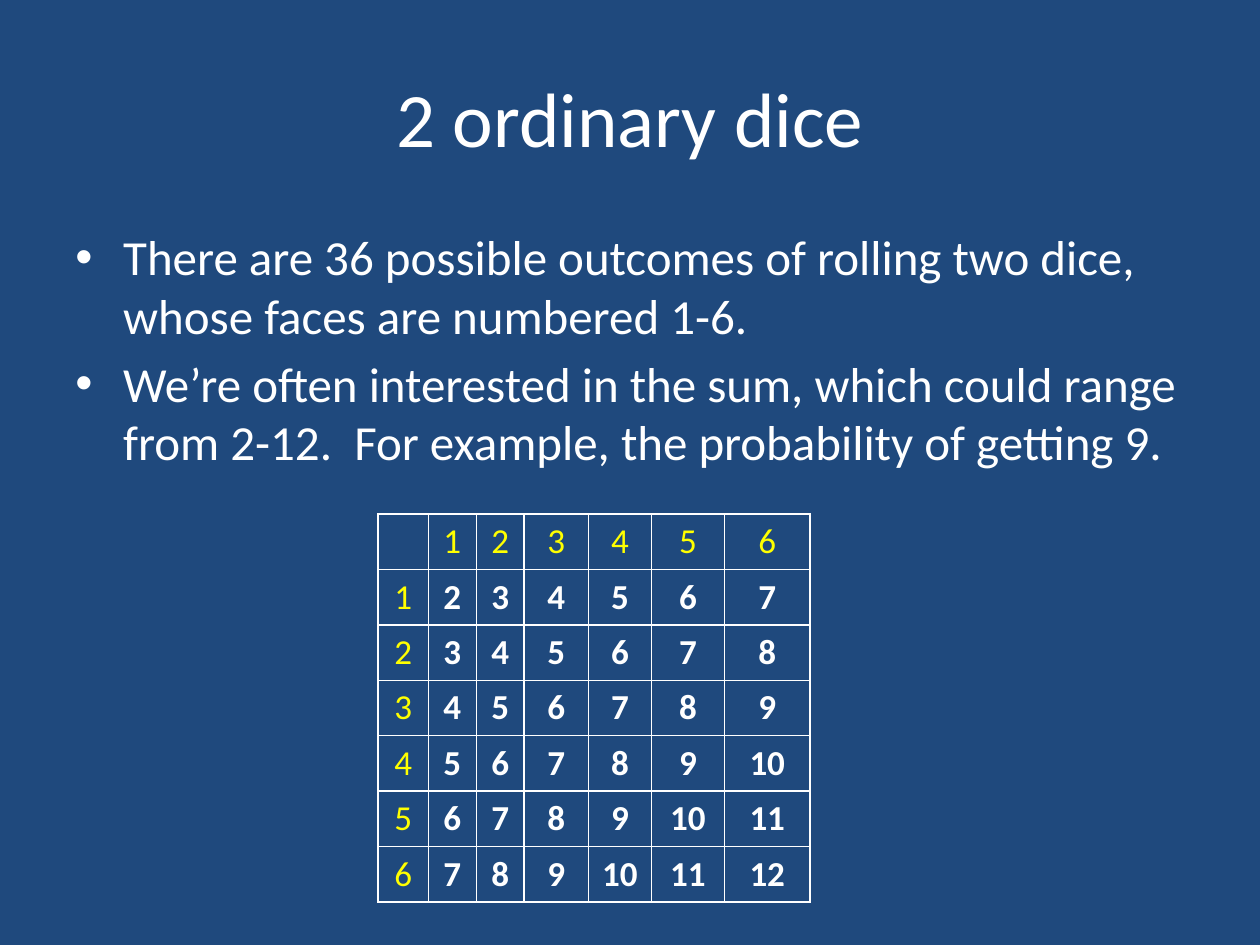
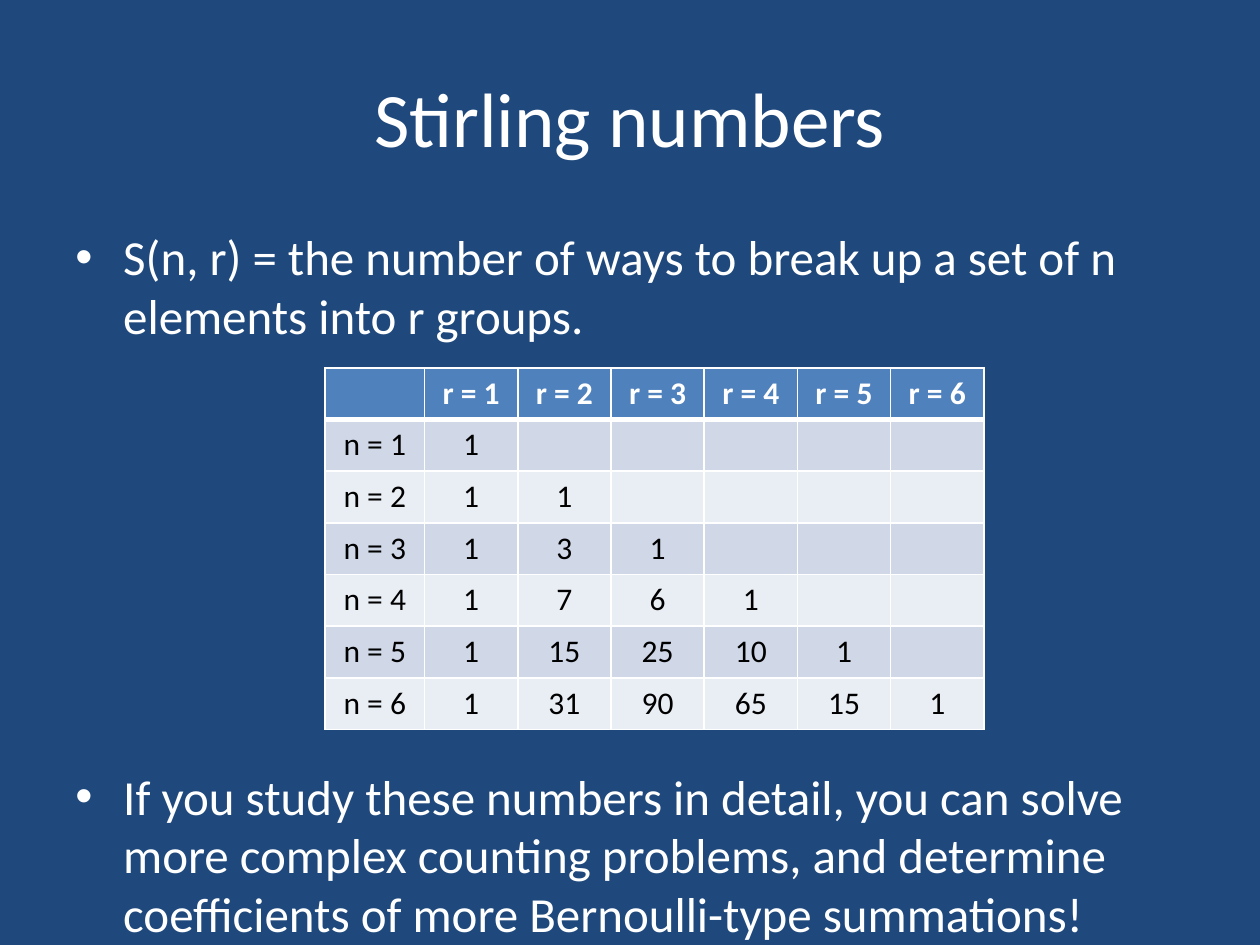
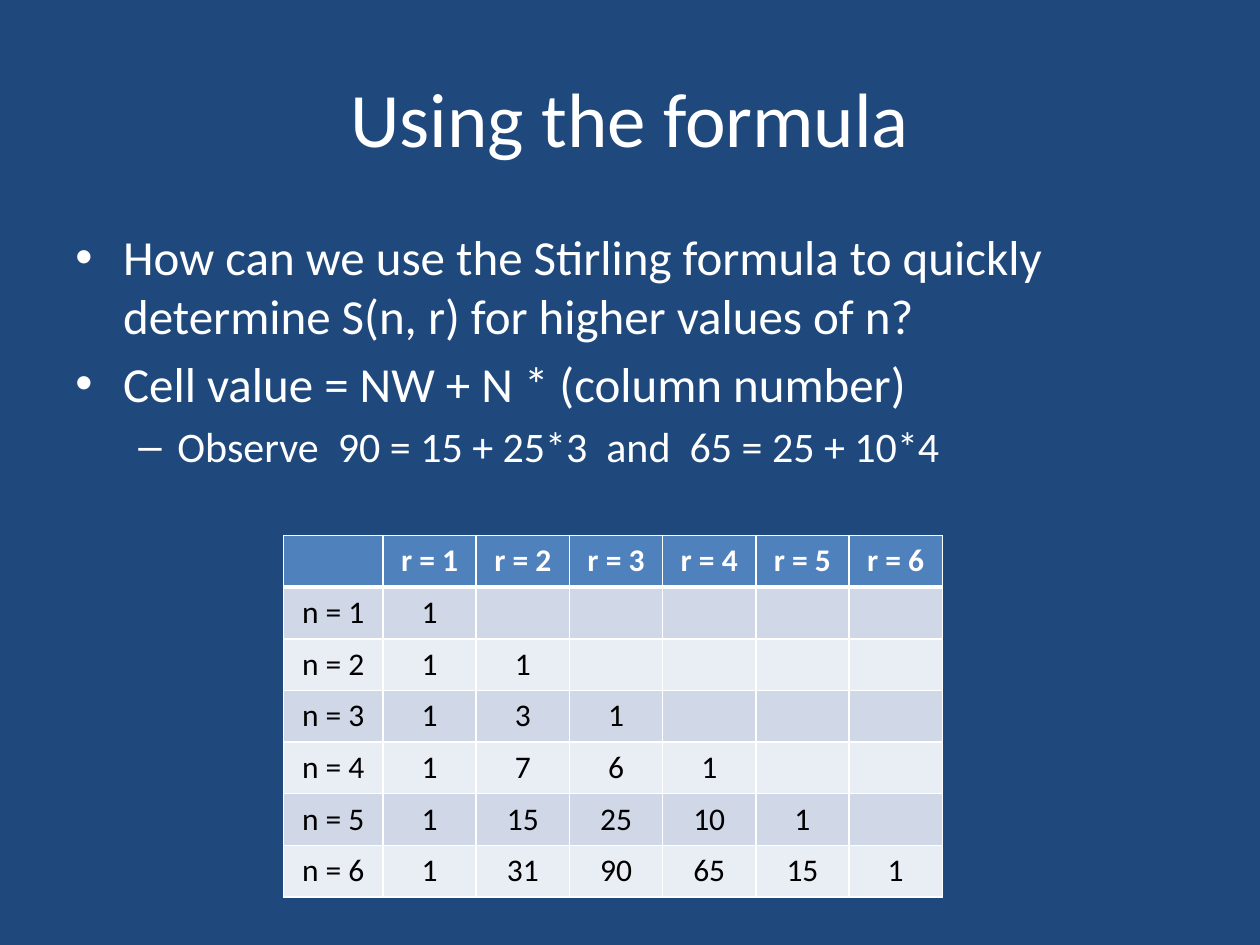
"""Build three slides on dice sums and Stirling numbers."""
from lxml import etree
from pptx import Presentation
from pptx.dml.color import RGBColor
from pptx.enum.text import MSO_ANCHOR, PP_ALIGN
from pptx.oxml.ns import qn
from pptx.util import Inches, Pt

NAVY, WHITE, BLACK, YELLOW = "1F497D", "FFFFFF", "000000", "FFFF00"
HEADER_BLUE, BAND_DARK, BAND_LIGHT = "4F81BD", "D0D8E8", "E9EDF4"
LEVELS = [("•", 28, 0.38, 0.38), ("–", 24, 0.81, 0.31)]
BORDER_SIDES = ("lnL", "lnR", "lnT", "lnB")


def style(paragraph, size, colour, bold=False):
    """Format every run of a paragraph."""
    for run in paragraph.runs:
        run.font.name = "Calibri"
        run.font.size = Pt(size)
        run.font.bold = bold
        run.font.color.rgb = RGBColor.from_string(colour)


def add_grid(slide, left, top, widths, row_height, rows, size, look):
    """Add a white-ruled table; look(row, column) gives fill, colour and bold."""
    table = slide.shapes.add_table(
        len(rows), len(widths), Inches(left), Inches(top),
        Inches(sum(widths)), Inches(row_height * len(rows))).table
    table.first_row = table.horz_banding = False
    for column, width in zip(table.columns, widths):
        column.width = Inches(width)
    for r, row in enumerate(rows):
        table.rows[r].height = Inches(row_height)
        for c, value in enumerate(row):
            cell = table.cell(r, c)
            fill, colour, bold = look(r, c)
            for side in BORDER_SIDES:
                under_header = fill and (r, side) in ((0, "lnB"), (1, "lnT"))
                line = etree.SubElement(cell._tc.get_or_add_tcPr(), qn(f"a:{side}"),
                                        w=str(Pt(3 if under_header else 1)))
                solid = etree.SubElement(line, qn("a:solidFill"))
                etree.SubElement(solid, qn("a:srgbClr"), val=WHITE)
            if fill:
                cell.fill.solid()
                cell.fill.fore_color.rgb = RGBColor.from_string(fill)
            else:
                cell.fill.background()
            paragraph = cell.text_frame.paragraphs[0]
            paragraph.text = str(value)
            paragraph.alignment = PP_ALIGN.CENTER
            style(paragraph, size, colour, bold)


faces = range(1, 7)
dice_sums = [["", *faces]] + [[a, *(a + b for b in faces)] for a in faces]

stirling_rows = [["", *(f"r = {r}" for r in faces)]]
counts = [1, 0, 0, 0, 0, 0, 0]
for n in faces:
    counts = [0] + [counts[r - 1] + counts[r] * r for r in faces]
    stirling_rows.append([f"n = {n}", *(count or "" for count in counts[1:])])


def_dice = dict(
    left=3, top=4.08, widths=[0.4, 0.38, 0.38, 0.51, 0.5, 0.58, 0.68],
    row_height=0.44, rows=dice_sums, size=20,
    look=lambda r, c: (None, WHITE, True) if r and c else (None, YELLOW, False))
stirling = dict(
    widths=[0.79] + [0.74] * 6, row_height=0.41, rows=stirling_rows, size=18,
    look=lambda r, c: (BAND_DARK if r % 2 else BAND_LIGHT, BLACK, False)
    if r else (HEADER_BLUE, WHITE, True))

pages = [
    ("2 ordinary dice", 4.95, [
        (0, 0, "There are 36 possible outcomes of rolling two dice, whose faces are numbered 1-6."),
        (0, 5, "We’re often interested in the sum, which could range from 2-12.  "
               "For example, the probability of getting 9."),
    ], def_dice),
    ("Stirling numbers", 5.75, [
        (0, 0, "S(n, r) = the number of ways to break up a set of n elements into r groups."),
        (0, 241, "If you study these numbers in detail, you can solve more complex counting "
                 "problems, and determine coefficients of more Bernoulli-type summations!"),
    ], dict(stirling, left=2.58, top=2.92)),
    ("Using the formula", 4.95, [
        (0, 0, "How can we use the Stirling formula to quickly determine S(n, r) "
               "for higher values of n?"),
        (0, 5, "Cell value = NW + N * (column number)"),
        (1, 5, "Observe  90 = 15 + 25*3  and  65 = 25 + 10*4"),
    ], dict(stirling, left=2.25, top=4.25)),
]

prs = Presentation()
prs.slide_width, prs.slide_height = Inches(10), Inches(7.5)
backdrop = prs.slide_master.background.fill
backdrop.solid()
backdrop.fore_color.rgb = RGBColor.from_string(NAVY)

for heading, body_height, points, grid in pages:
    slide = prs.slides.add_slide(prs.slide_layouts[5])
    title = slide.shapes.title
    title.left, title.top = Inches(0.5), Inches(0.3)
    title.width, title.height = Inches(9), Inches(1.25)
    title.text_frame.text = heading
    title.text_frame.vertical_anchor = MSO_ANCHOR.MIDDLE
    title.text_frame.paragraphs[0].alignment = PP_ALIGN.CENTER
    style(title.text_frame.paragraphs[0], 44, WHITE)

    body = slide.shapes.add_textbox(
        Inches(0.5), Inches(1.75), Inches(9), Inches(body_height)).text_frame
    body.word_wrap = True
    body.text = "\n".join(text for _, _, text in points)
    for paragraph, (level, gap, _) in zip(body.paragraphs, points):
        bullet, size, margin, hanging = LEVELS[level]
        paragraph.level = level
        paragraph.space_before = Pt(gap)
        style(paragraph, size, WHITE)
        properties = paragraph._p.get_or_add_pPr()
        properties.set("marL", str(Inches(margin)))
        properties.set("indent", str(-Inches(hanging)))
        etree.SubElement(properties, qn("a:buFont"), typeface="Arial")
        etree.SubElement(properties, qn("a:buChar"), char=bullet)

    add_grid(slide, **grid)

prs.save("out.pptx")
